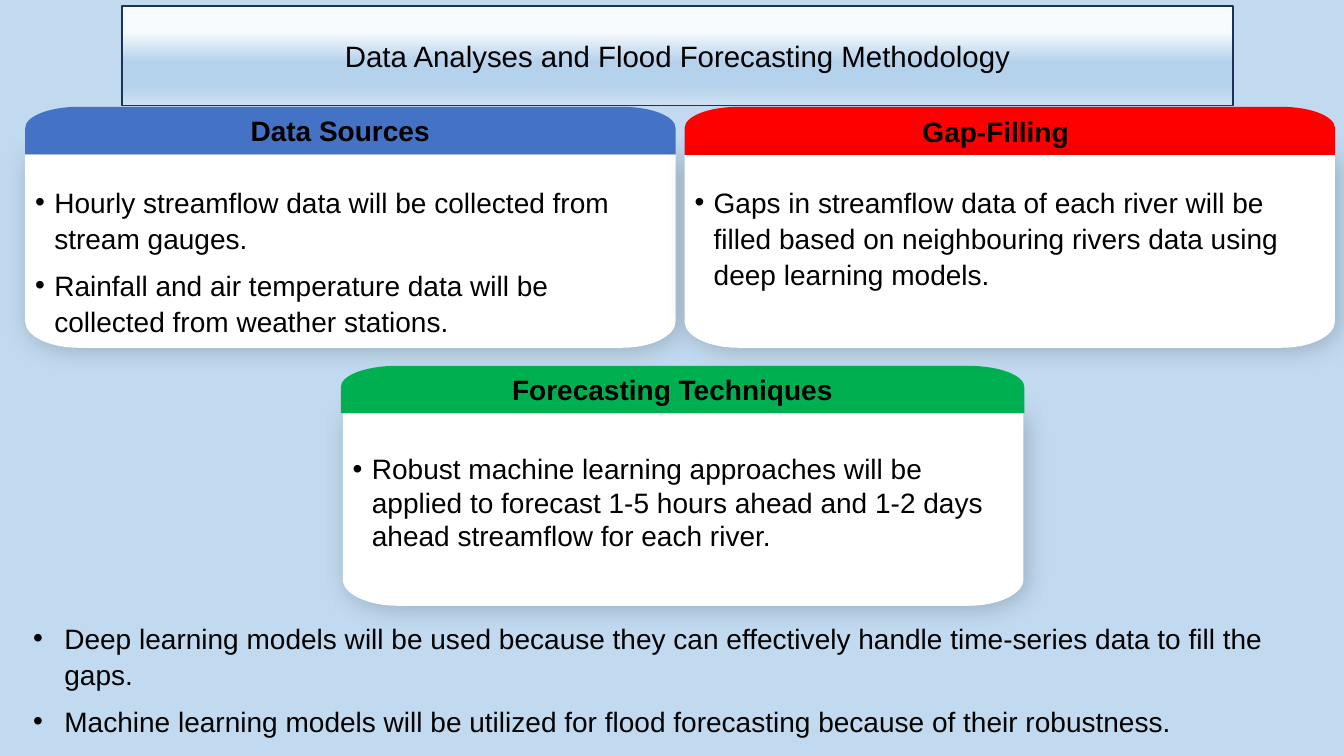
from dataclasses import dataclass

from lxml.etree import SubElement
from pptx import Presentation
from pptx.dml.color import RGBColor
from pptx.enum.shapes import MSO_SHAPE
from pptx.enum.text import MSO_ANCHOR, PP_ALIGN
from pptx.oxml.ns import qn
from pptx.shapes.autoshape import Shape
from pptx.slide import Slide
from pptx.text.text import TextFrame, _Paragraph
from pptx.util import Inches, Pt

COLORS = {
    "background": "C2DAF0", "text": "000000", "card": "FFFFFF",
    "title_line": "1E3256", "shadow": "000000",
    "blue": "4472C4", "red": "FF0000", "green": "00B050",
}
TITLE_STOPS = [(26, "F7FAFD"), (56, "B5D2EC"), (80, "B5D2EC"), (100, "CEE1F2")]
FONT = "Arial"
CURVE_PULL = 0.55  # control point distance of a quarter ellipse


@dataclass
class Box:
    left: float
    top: float
    width: float
    height: float


@dataclass
class Card:
    heading: str
    color: str
    header: Box
    body: Box
    bullets: list[str]
    corner: float = 0.53
    bottom_inset: float = 0.05
    line_spacing: float = 1.07
    space_after: float = 8
    body_in_front: bool = False


CARDS = [
    Card("Data Sources", "blue", Box(0.25, 1.06, 6.45, 0.47), Box(0.25, 1.54, 6.45, 1.91),
         ["Hourly streamflow data will be collected from stream gauges.",
          "Rainfall and air temperature data will be collected from weather stations."]),
    Card("Forecasting Techniques", "green", Box(3.38, 3.63, 6.78, 0.47), Box(3.4, 4.1, 6.75, 1.91),
         ["Robust machine learning approaches will be applied to forecast 1-5 hours ahead "
          "and 1-2 days ahead streamflow for each river."],
         corner=0.55, bottom_inset=0.38, line_spacing=1, space_after=0),
    Card("Gap-Filling ", "red", Box(6.79, 1.06, 6.45, 0.48), Box(6.79, 1.54, 6.45, 1.91),
         ["Gaps in streamflow data of each river will be filled based on neighbouring "
          "rivers data using deep learning models."],
         bottom_inset=0.52, body_in_front=True),
]
NOTES = [
    "Deep learning models will be used because they can effectively handle time-series "
    "data to fill the gaps.",
    "Machine learning models will be utilized for flood forecasting because of their robustness.",
]


def rgb(name: str) -> RGBColor:
    return RGBColor.from_string(COLORS[name])


def inches(box: Box) -> list[int]:
    return [Inches(v) for v in (box.left, box.top, box.width, box.height)]


def format_runs(p: _Paragraph, size: float, bold: bool = False) -> None:
    for r in p.runs:
        r.font.name = FONT
        r.font.size = Pt(size)
        r.font.bold = bold
        r.font.color.rgb = rgb("text")


def set_insets(tf: TextFrame, top: float, right: float, bottom: float) -> None:
    tf.margin_left, tf.margin_right = Inches(0.1), Inches(right)
    tf.margin_top, tf.margin_bottom = Inches(top), Inches(bottom)


def write_heading(tf: TextFrame, text: str, size: float, bold: bool) -> None:
    tf.word_wrap = True
    tf.vertical_anchor = MSO_ANCHOR.MIDDLE
    tf.text = text
    p = tf.paragraphs[0]
    p.alignment = PP_ALIGN.CENTER
    format_runs(p, size, bold)


def write_bullets(tf: TextFrame, items: list[str], indent: float,
                  line_spacing: float = 1.07, space_after: float = 8) -> None:
    tf.word_wrap = True
    tf.text = "\n".join(items)
    for p in tf.paragraphs:
        p.alignment = PP_ALIGN.LEFT
        p.line_spacing = line_spacing
        p.space_after = Pt(space_after)
        format_runs(p, 20)
        pPr = p._p.get_or_add_pPr()
        pPr.set("marL", str(Inches(indent)))
        pPr.set("indent", str(-Inches(indent)))
        SubElement(pPr, qn("a:buFont"), typeface=FONT)
        SubElement(pPr, qn("a:buChar"), char="•")


def merge_into_curve(segments: list) -> None:
    """Turn three consecutive line segments into one cubic curve through their points."""
    first = segments[0]
    curve = first.makeelement(qn("a:cubicBezTo"))
    first.addprevious(curve)
    for segment in segments:
        curve.append(segment[0])
        segment.getparent().remove(segment)


def add_half_rounded(s: Slide, box: Box, rx: float, ry: float, color: str,
                     round_top: bool) -> Shape:
    """Draw a box whose top or bottom pair of corners is elliptical."""
    left, top = box.left, box.top
    right, bottom = left + box.width, top + box.height
    pull_x, pull_y = rx * (1 - CURVE_PULL), ry * (1 - CURVE_PULL)
    points = [
        (left, bottom), (left, top + ry),
        (left, top + pull_y), (left + pull_x, top), (left + rx, top),
        (right - rx, top),
        (right - pull_x, top), (right, top + pull_y), (right, top + ry),
        (right, bottom),
    ]
    if not round_top:
        points = [(x, top + bottom - y) for x, y in points]
    outline = [(Inches(x), Inches(y)) for x, y in points]
    builder = s.shapes.build_freeform(*outline[0])
    builder.add_line_segments(outline[1:], close=False)
    sp = builder.convert_to_shape()
    outline_path = next(sp._element.iter(qn("a:path")))
    lines = outline_path.findall(qn("a:lnTo"))
    for corner in (lines[1:4], lines[5:8]):
        merge_into_curve(corner)
    SubElement(outline_path, qn("a:close"))
    sp.shadow.inherit = False
    sp.fill.solid()
    sp.fill.fore_color.rgb = rgb(color)
    sp.line.fill.background()
    return sp


def add_soft_shadow(sp: Shape) -> None:
    effects = sp._element.spPr.find(qn("a:effectLst"))
    shadow = SubElement(effects, qn("a:outerShdw"), blurRad=str(Pt(18)), dist=str(Pt(3)),
                        dir="2700000", algn="tl", rotWithShape="0")
    color = SubElement(shadow, qn("a:srgbClr"), val=COLORS["shadow"])
    SubElement(color, qn("a:alpha"), val="20000")


def add_body(s: Slide, card: Card) -> None:
    sp = add_half_rounded(s, card.body, card.corner, 0.26, "card", round_top=False)
    add_soft_shadow(sp)
    tf = sp.text_frame
    tf.vertical_anchor = MSO_ANCHOR.MIDDLE
    set_insets(tf, 0.23, 0.1, card.bottom_inset)
    write_bullets(tf, card.bullets, 0.19, card.line_spacing, card.space_after)


def add_header(s: Slide, card: Card) -> None:
    sp = add_half_rounded(s, card.header, card.corner, 0.21, card.color, round_top=True)
    set_insets(sp.text_frame, 0.05, 0.3, 0.05)
    write_heading(sp.text_frame, card.heading, 20, bold=True)


def add_title(s: Slide) -> None:
    sp = s.shapes.add_shape(MSO_SHAPE.RECTANGLE, *inches(Box(1.21, 0.06, 11.02, 0.99)))
    sp.shadow.inherit = False
    sp.fill.gradient()
    sp.fill.gradient_angle = 270
    stops = sp._element.spPr.find(qn("a:gradFill")).find(qn("a:gsLst"))
    for stop in list(stops):
        stops.remove(stop)
    for position, color in TITLE_STOPS:
        stop = SubElement(stops, qn("a:gs"), pos=str(position * 1000))
        SubElement(stop, qn("a:srgbClr"), val=color)
    sp.line.color.rgb = rgb("title_line")
    sp.line.width = Pt(1)
    write_heading(sp.text_frame, "Data Analyses and Flood Forecasting Methodology", 21, bold=False)


def main() -> None:
    prs = Presentation()
    prs.slide_width, prs.slide_height = Inches(13.33), Inches(7.5)
    s = prs.slides.add_slide(prs.slide_layouts[6])
    s.background.fill.solid()
    s.background.fill.fore_color.rgb = rgb("background")
    add_title(s)
    for card in CARDS:
        parts = (add_header, add_body) if card.body_in_front else (add_body, add_header)
        for add_part in parts:
            add_part(s, card)
    notes = s.shapes.add_textbox(*inches(Box(0.23, 6.09, 12.72, 1.27)))
    write_bullets(notes.text_frame, NOTES, 0.31)
    prs.save("out.pptx")


if __name__ == "__main__":
    main()
